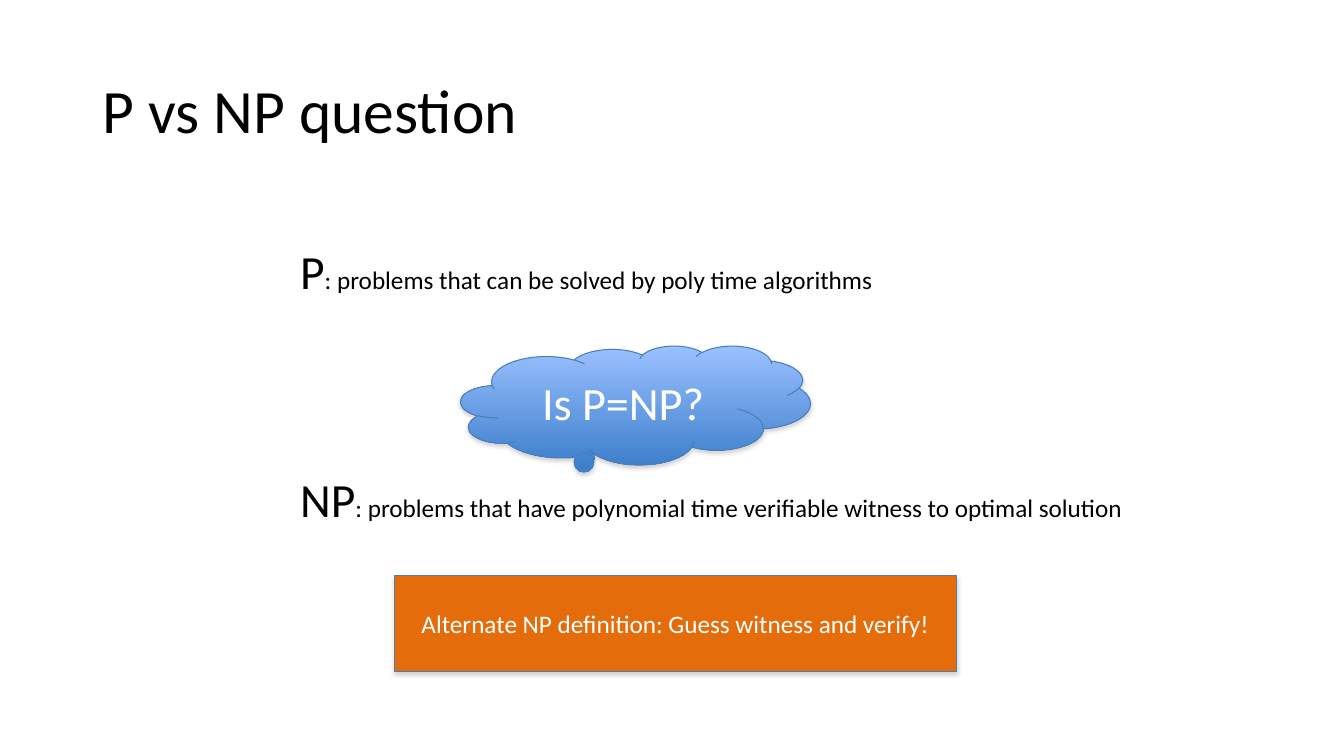
"""Build the slide that poses the P versus NP question."""
from dataclasses import dataclass

from lxml.etree import SubElement
from pptx import Presentation
from pptx.dml.color import RGBColor
from pptx.enum.dml import MSO_FILL
from pptx.enum.shapes import MSO_SHAPE
from pptx.enum.text import MSO_ANCHOR, MSO_AUTO_SIZE, PP_ALIGN
from pptx.oxml.ns import qn
from pptx.shapes.autoshape import Shape
from pptx.slide import Slide
from pptx.text.text import _Run
from pptx.util import Pt

FONT = "Calibri"
COLORS = {
    "text": "000000",
    "light text": "FFFFFF",
    "outline": "4A7EBB",
    "cloud top": "9BC1FF",
    "cloud bottom": "3F80CD",
    "alternate": "E46C0A",
    "shadow": "808080",
}
CLASS_LEFT = 207.36
CLASS_HEIGHT = 48.24


@dataclass(frozen=True)
class Box:
    """Position and size in points."""

    left: float
    top: float
    width: float
    height: float

    def lengths(self) -> tuple[Pt, Pt, Pt, Pt]:
        """Return the four lengths as Pt values."""
        return Pt(self.left), Pt(self.top), Pt(self.width), Pt(self.height)


@dataclass(frozen=True)
class ComplexityClass:
    """A class symbol with its definition."""

    symbol: str
    definition: str
    top: float
    width: float


@dataclass(frozen=True)
class Callout:
    """A filled shape with one centred line of text."""

    text: str
    preset: MSO_SHAPE
    box: Box
    size: float
    fills: tuple[str, ...]
    adjustments: tuple[float, ...] = ()


CLASSES = (
    ComplexityClass("P", ": problems that can be solved by poly time algorithms", 169.2, 427.68),
    ComplexityClass(
        "NP",
        ": problems that have polynomial time verifiable witness to optimal solution",
        331.92,
        607.68,
    ),
)
CALLOUTS = (
    Callout(
        "Is P=NP?",
        MSO_SHAPE.CLOUD_CALLOUT,
        Box(329.04, 246.96, 249.84, 84.96),
        33,
        ("cloud top", "cloud bottom"),
        (-0.136, 0.443),
    ),
    Callout(
        "Alternate NP definition: Guess witness and verify!",
        MSO_SHAPE.RECTANGLE,
        Box(281.52, 411.12, 401.76, 68.4),
        18,
        ("alternate",),
    ),
)


def rgb(name: str) -> RGBColor:
    """Look up a named colour."""
    return RGBColor.from_string(COLORS[name])


def format_run(run: _Run, size: float, color: str) -> None:
    """Apply font, size and colour to a run."""
    run.font.name = FONT
    run.font.size = Pt(size)
    run.font.color.rgb = rgb(color)


def set_title(slide: Slide, text: str, box: Box) -> None:
    """Fill and place the title placeholder."""
    title = slide.shapes.title
    title.left, title.top, title.width, title.height = box.lengths()
    title.text_frame.text = text
    title.text_frame.vertical_anchor = MSO_ANCHOR.MIDDLE
    heading = title.text_frame.paragraphs[0]
    heading.alignment = PP_ALIGN.LEFT
    heading.line_spacing = 0.9
    format_run(heading.runs[0], 44, "text")


def add_class(slide: Slide, item: ComplexityClass) -> None:
    """Add a complexity class with a large symbol and its definition."""
    box = Box(CLASS_LEFT, item.top, item.width, CLASS_HEIGHT)
    frame = slide.shapes.add_textbox(*box.lengths()).text_frame
    frame.word_wrap = False
    frame.auto_size = MSO_AUTO_SIZE.SHAPE_TO_FIT_TEXT
    statement = frame.paragraphs[0]
    for text, size in ((item.symbol, 34), (item.definition, 18)):
        run = statement.add_run()
        run.text = text
        format_run(run, size, "text")


def add_shadow(shape: Shape) -> None:
    """Give the shape a soft shadow falling straight down."""
    shape.shadow.inherit = False
    effects = shape._element.spPr.find(qn("a:effectLst"))
    shadow = SubElement(
        effects,
        qn("a:outerShdw"),
        blurRad=str(Pt(3.1)),
        dist=str(Pt(1.8)),
        dir="5400000",
        rotWithShape="0",
    )
    color = SubElement(shadow, qn("a:srgbClr"), val=COLORS["shadow"])
    SubElement(color, qn("a:alpha"), val="35000")


def fill_shape(shape: Shape, fills: tuple[str, ...]) -> None:
    """Fill with one solid colour or a gradient running top to bottom."""
    if len(fills) == 1:
        shape.fill.solid()
        shape.fill.fore_color.rgb = rgb(fills[0])
        return
    shape.fill.gradient()
    shape.fill.gradient_angle = 270
    for position, (stop, name) in enumerate(zip(shape.fill.gradient_stops, fills)):
        stop.position = position
        stop.color.rgb = rgb(name)


def add_callout(slide: Slide, callout: Callout) -> None:
    """Add a filled, outlined and shadowed callout."""
    shape = slide.shapes.add_shape(callout.preset, *callout.box.lengths())
    for index, value in enumerate(callout.adjustments):
        shape.adjustments[index] = value
    fill_shape(shape, callout.fills)
    shape.line.color.rgb = rgb("outline")
    shape.line.width = Pt(0.75)
    add_shadow(shape)
    frame = shape.text_frame
    frame.text = callout.text
    frame.word_wrap = True
    frame.vertical_anchor = MSO_ANCHOR.MIDDLE
    frame.paragraphs[0].alignment = PP_ALIGN.CENTER
    format_run(frame.paragraphs[0].runs[0], callout.size, "light text")


def main() -> None:
    """Build and save the slide."""
    deck = Presentation()
    deck.slide_width, deck.slide_height = Pt(960), Pt(540)
    slide = deck.slides.add_slide(deck.slide_layouts[5])
    set_title(slide, "P vs NP question", Box(66, 28.8, 828, 104.4))
    for item in CLASSES:
        add_class(slide, item)
    for callout in CALLOUTS:
        add_callout(slide, callout)
    deck.save("out.pptx")


if __name__ == "__main__":
    main()
